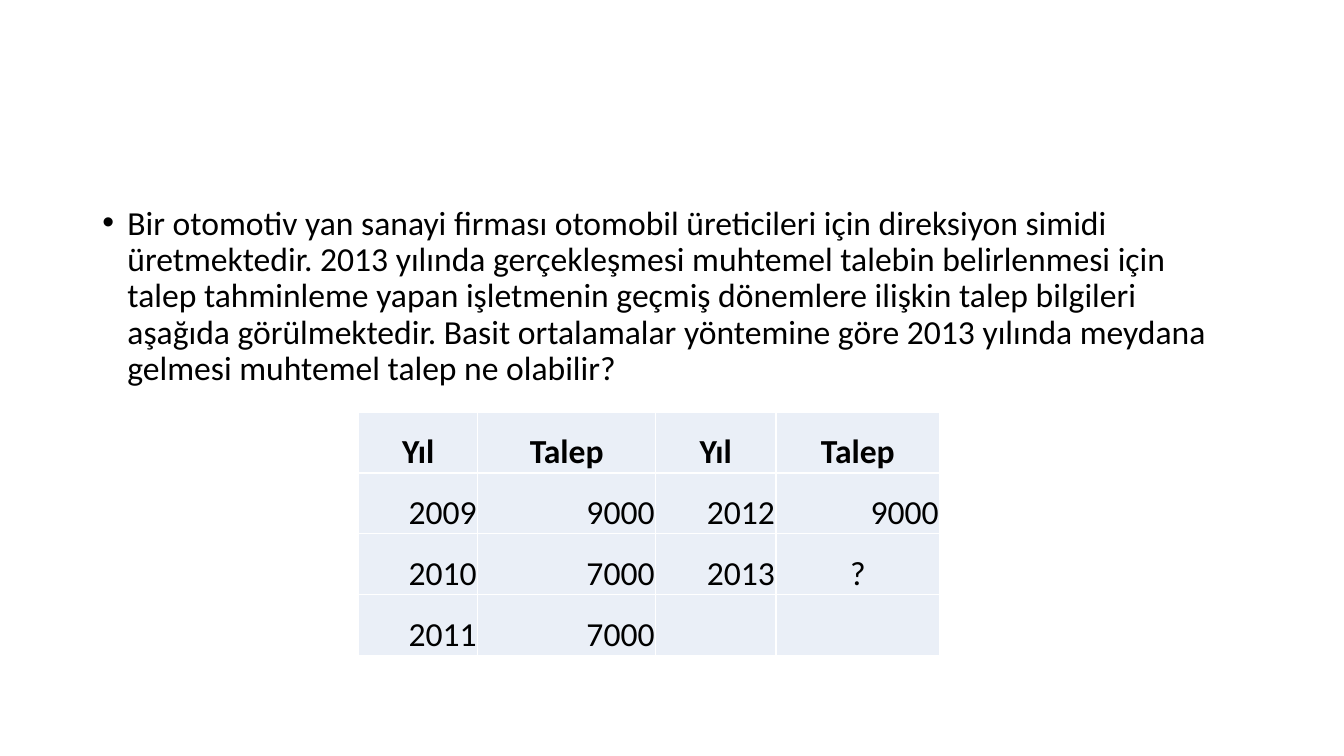
import lxml.etree
import pptx
import pptx.dml.color
import pptx.enum.text
import pptx.oxml.ns
import pptx.util

Pt = pptx.util.Pt
ALIGN = pptx.enum.text.PP_ALIGN
ANCHOR = pptx.enum.text.MSO_ANCHOR
qn = pptx.oxml.ns.qn

COLOURS = {"text": "000000", "cell": "EAEFF7", "border": "FFFFFF"}
FONT = "Calibri"
SIZE = 24

QUESTION = (
    "Bir otomotiv yan sanayi firması otomobil üreticileri için direksiyon simidi "
    "üretmektedir. 2013 yılında gerçekleşmesi muhtemel talebin belirlenmesi için "
    "talep tahminleme yapan işletmenin geçmiş dönemlere ilişkin talep bilgileri "
    "aşağıda görülmektedir. Basit ortalamalar yöntemine göre 2013 yılında meydana "
    "gelmesi muhtemel talep ne olabilir?"
)
DEMAND = [
    ["Yıl", "Talep", "Yıl", "Talep"],
    ["2009", "9000", "2012", "9000"],
    ["2010", "7000", "2013", "?"],
    ["2011", "7000", "", ""],
]
COLUMN_WIDTHS = [85, 127, 86, 117]


def colour(name):
    return pptx.dml.color.RGBColor.from_string(COLOURS[name])


def style_text(para, bold=False):
    for span in para.runs:
        span.font.name = FONT
        span.font.size = Pt(SIZE)
        span.font.bold = bold
        span.font.color.rgb = colour("text")


def add_question(page, left, top, width, height):
    box = page.shapes.add_textbox(Pt(left), Pt(top), Pt(width), Pt(height))
    box.text_frame.word_wrap = True
    box.text_frame.text = QUESTION
    para = box.text_frame.paragraphs[0]
    para.line_spacing = 0.9
    para.space_before = Pt(10)
    style_text(para)
    properties = para._p.get_or_add_pPr()
    properties.set("marL", str(Pt(18)))
    properties.set("indent", str(Pt(-18)))
    lxml.etree.SubElement(properties, qn("a:buFont"), typeface="Arial")
    lxml.etree.SubElement(properties, qn("a:buChar"), char="•")


def add_borders(cell):
    properties = cell._tc.get_or_add_tcPr()
    for position, side in enumerate(["a:lnL", "a:lnR", "a:lnT", "a:lnB"]):
        line = properties.makeelement(qn(side), {"w": str(Pt(1))})
        fill = lxml.etree.SubElement(line, qn("a:solidFill"))
        lxml.etree.SubElement(fill, qn("a:srgbClr"), val=COLOURS["border"])
        properties.insert(position, line)


def fill_cell(cell, text, heading):
    cell.margin_left = cell.margin_right = cell.margin_top = Pt(0.75)
    cell.margin_bottom = Pt(0)
    cell.vertical_anchor = ANCHOR.BOTTOM
    cell.fill.solid()
    cell.fill.fore_color.rgb = colour("cell")
    add_borders(cell)
    if text:
        cell.text_frame.text = text
        para = cell.text_frame.paragraphs[0]
        para.alignment = ALIGN.RIGHT if text.isdigit() else ALIGN.CENTER
        style_text(para, heading)


def add_demand_table(page, left, top, width, height):
    rows, columns = len(DEMAND), len(COLUMN_WIDTHS)
    table = page.shapes.add_table(
        rows, columns, Pt(left), Pt(top), Pt(width), Pt(height)
    ).table
    for column, share in zip(table.columns, COLUMN_WIDTHS):
        column.width = Pt(width * share / sum(COLUMN_WIDTHS))
    for row_number, values in enumerate(DEMAND):
        table.rows[row_number].height = Pt(height / rows)
        for column_number, text in enumerate(values):
            fill_cell(table.cell(row_number, column_number), text, row_number == 0)


def main():
    deck = pptx.Presentation()
    deck.slide_width = Pt(960)
    deck.slide_height = Pt(540)
    page = deck.slides.add_slide(deck.slide_layouts[6])
    add_question(page, 66, 143.75, 828, 342.6)
    add_demand_table(page, 256.3, 294.5, 415, 173.5)
    deck.save("out.pptx")


if __name__ == "__main__":
    main()
